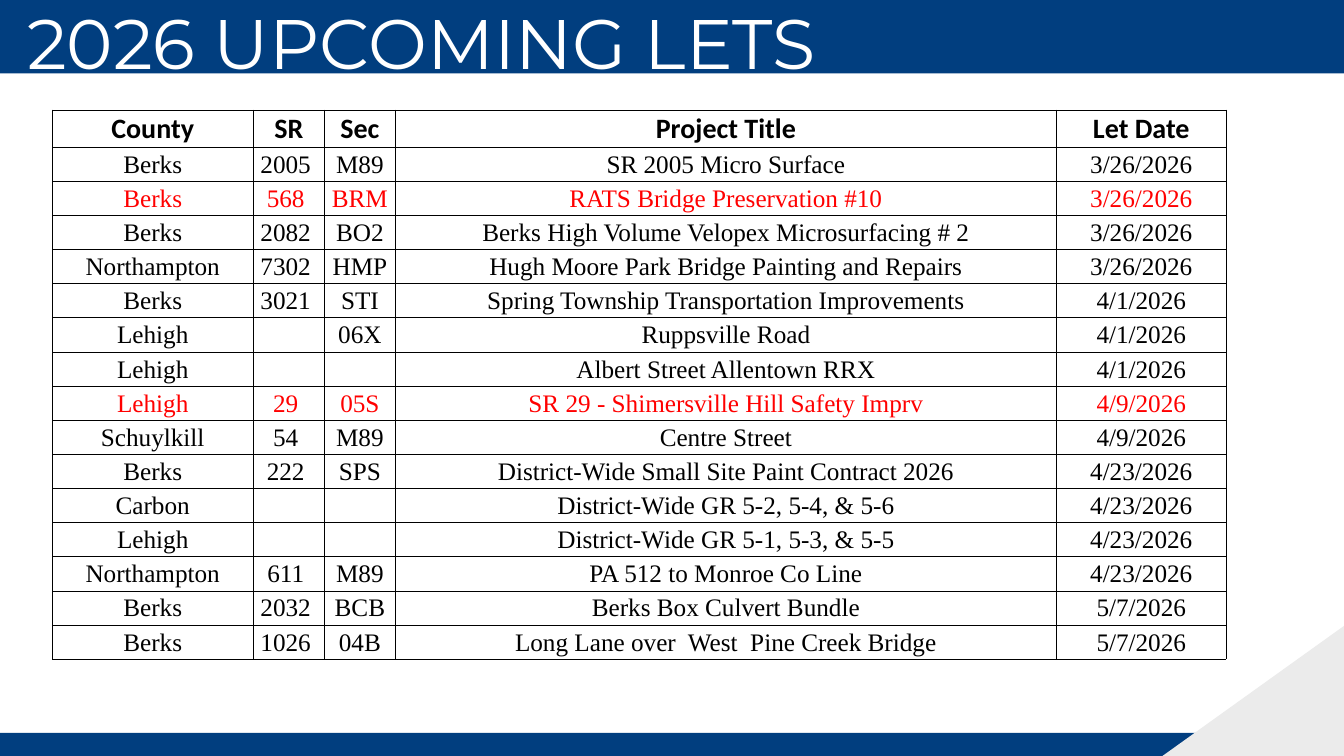
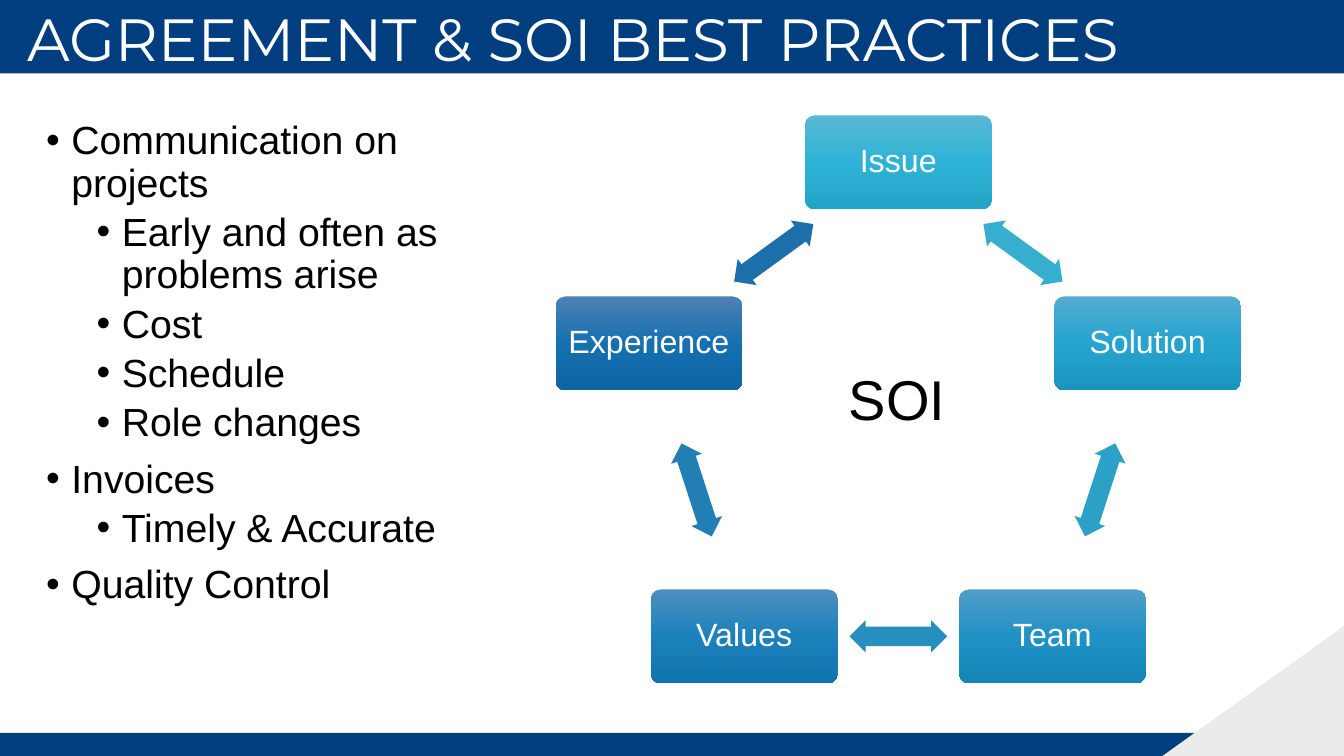
import math
from dataclasses import dataclass
from typing import NamedTuple, Optional

import lxml.etree
import pptx
import pptx.dml.color
import pptx.enum.shapes
import pptx.enum.text
import pptx.oxml.ns
import pptx.util
from copy import deepcopy

Inches = pptx.util.Inches
Pt = pptx.util.Pt
qn = pptx.oxml.ns.qn
Preset = pptx.enum.shapes.MSO_SHAPE
Anchor = pptx.enum.text.MSO_ANCHOR
Align = pptx.enum.text.PP_ALIGN


class TextStyle(NamedTuple):
    font: str
    size: float
    color: str
    bold: bool = False


@dataclass(frozen=True)
class Theme:
    width: float = 13.33
    height: float = 7.5
    navy: str = "013E7F"
    corner: str = "EBEBEB"
    white: str = "FFFFFF"
    border: str = "000000"
    border_width: float = 0.5
    heading: TextStyle = TextStyle("Montserrat", 50, "FFFFFF")
    long_heading: TextStyle = TextStyle("Montserrat", 42.5, "FFFFFF")
    table_header: TextStyle = TextStyle("Calibri", 20, "000000", True)
    table_body: TextStyle = TextStyle("Times New Roman", 18, "000000")
    table_highlight: TextStyle = TextStyle("Times New Roman", 18, "FF0000")
    bullet: TextStyle = TextStyle("Arial", 28, "000000")
    step: TextStyle = TextStyle("Arial", 23, "FFFFFF")
    hub: TextStyle = TextStyle("Arial", 40, "000000")


THEME = Theme()


class Box(NamedTuple):
    left: float
    top: float
    width: float
    height: float

    def lengths(self) -> list:
        return [Inches(value) for value in self]


class Letting(NamedTuple):
    county: str
    route: str
    section: str
    project: str
    date: str
    highlighted: bool = False


class Bullet(NamedTuple):
    text: str
    level: int = 0


class Step(NamedTuple):
    label: str
    gradient: tuple
    arrow: str


LETTING_HEADER = ("County", "SR", "Sec", "Project Title", "Let Date")
LETTING_WIDTHS = (1.99, 0.71, 0.7, 6.56, 1.68)
LETTINGS = (
    Letting("Berks", "2005 ", "M89", "SR 2005 Micro Surface", "3/26/2026"),
    Letting("Berks", "568 ", "BRM", "RATS Bridge Preservation #10", "3/26/2026", True),
    Letting("Berks", "2082 ", "BO2", "Berks High Volume Velopex Microsurfacing # 2", "3/26/2026"),
    Letting("Northampton", "7302 ", "HMP", "Hugh Moore Park Bridge Painting and Repairs", "3/26/2026"),
    Letting("Berks", "3021 ", "STI", "Spring Township Transportation Improvements", "4/1/2026"),
    Letting("Lehigh", "", "06X", "Ruppsville Road", "4/1/2026"),
    Letting("Lehigh", "", "", "Albert Street Allentown RRX", "4/1/2026"),
    Letting("Lehigh", "29 ", "05S", "SR 29 - Shimersville Hill Safety Imprv", "4/9/2026", True),
    Letting("Schuylkill", "54 ", "M89", "Centre Street", "4/9/2026"),
    Letting("Berks", "222 ", "SPS", "District-Wide Small Site Paint Contract 2026", "4/23/2026"),
    Letting("Carbon", "", "", "District-Wide GR 5-2, 5-4, & 5-6", "4/23/2026"),
    Letting("Lehigh", "", "", "District-Wide GR 5-1, 5-3, & 5-5", "4/23/2026"),
    Letting("Northampton", "611 ", "M89", "PA 512 to Monroe Co Line", "4/23/2026"),
    Letting("Berks", "2032 ", "BCB", "Berks Box Culvert Bundle", "5/7/2026"),
    Letting("Berks", "1026 ", "04B", "Long Lane over  West  Pine Creek Bridge", "5/7/2026"),
)

PRACTICES = (
    Bullet("Communication on projects"),
    Bullet("Early and often as problems arise", 1),
    Bullet("Cost", 1),
    Bullet("Schedule", 1),
    Bullet("Role changes", 1),
    Bullet("Invoices"),
    Bullet("Timely & Accurate", 1),
    Bullet("Quality Control"),
)

STEPS = (
    Step("Issue", ("59B8D4", "2EB3D6", "21A4C6"), "36AFCE"),
    Step("Solution", ("53ACD1", "25A4CF", "1A95BF"), "2DA0C8"),
    Step("Team", ("519CC8", "2092C5", "1584B6"), "278FBE"),
    Step("Values", ("4F8EBF", "1B81BB", "1174AD"), "227FB4"),
    Step("Experience", ("4E80B5", "1670B0", "0D65A3"), "1D6FA9"),
)


def rgb(value: str) -> pptx.dml.color.RGBColor:
    return pptx.dml.color.RGBColor.from_string(value)


def add_run(paragraph, text: str, style: TextStyle) -> None:
    run = paragraph.add_run()
    run.text = text
    run.font.name = style.font
    run.font.size = Pt(style.size)
    run.font.bold = style.bold
    run.font.color.rgb = rgb(style.color)


def add_preset(slide, preset, box: Box, color: Optional[str] = None):
    shape = slide.shapes.add_shape(preset, *box.lengths())
    shape.shadow.inherit = False
    shape.line.fill.background()
    if color:
        shape.fill.solid()
        shape.fill.fore_color.rgb = rgb(color)
    return shape


def add_text_frame(slide, box: Box, wrap: bool = True):
    frame = slide.shapes.add_textbox(*box.lengths()).text_frame
    frame.word_wrap = wrap
    return frame


def add_branded_slide(deck, heading: str, style: TextStyle):
    slide = deck.slides.add_slide(deck.slide_layouts[6])
    add_preset(slide, Preset.RECTANGLE, Box(0, 7.27, THEME.width, 0.23), THEME.navy)
    corner = add_preset(slide, Preset.RIGHT_TRIANGLE, Box(11.53, 6.21, 1.8, 1.29), THEME.corner)
    corner._element.spPr.get_or_add_xfrm().set("flipH", "1")
    add_preset(slide, Preset.RECTANGLE, Box(0, 0, THEME.width, 0.73), THEME.navy)
    title = add_text_frame(slide, Box(0.17, 0.11, 12.96, 0.8)).paragraphs[0]
    title.line_spacing = 0.8
    add_run(title, heading, style)
    return slide


def add_borders(cell) -> None:
    properties = cell._tc.get_or_add_tcPr()
    for side in ("a:lnL", "a:lnR", "a:lnT", "a:lnB"):
        line = lxml.etree.SubElement(properties, qn(side), w=str(Pt(THEME.border_width)))
        fill = lxml.etree.SubElement(line, qn("a:solidFill"))
        lxml.etree.SubElement(fill, qn("a:srgbClr"), val=THEME.border)


def fill_row(cells, texts: tuple, style: TextStyle, inset: float) -> None:
    for cell, text in zip(cells, texts):
        add_borders(cell)
        cell.fill.solid()
        cell.fill.fore_color.rgb = rgb(THEME.white)
        cell.margin_left = cell.margin_right = cell.margin_top = Inches(inset)
        cell.margin_bottom = 0
        cell.vertical_anchor = Anchor.MIDDLE
        paragraph = cell.text_frame.paragraphs[0]
        paragraph.alignment = Align.CENTER
        if text:
            add_run(paragraph, text, style)
        else:
            paragraph.font.size = Pt(style.size)


def add_letting_table(slide) -> None:
    box = Box(0.52, 1.09, sum(LETTING_WIDTHS), 5.45)
    header_height = 0.37
    row_height = (box.height - header_height) / len(LETTINGS)
    table = slide.shapes.add_table(
        len(LETTINGS) + 1, len(LETTING_HEADER), *box.lengths()
    ).table
    table.first_row = table.horz_banding = False
    for column, width in zip(table.columns, LETTING_WIDTHS):
        column.width = Inches(width)
    for index, row in enumerate(table.rows):
        row.height = Inches(row_height if index else header_height)
    header, *body = table.rows
    fill_row(header.cells, LETTING_HEADER, THEME.table_header, 0)
    for row, letting in zip(body, LETTINGS):
        style = THEME.table_highlight if letting.highlighted else THEME.table_body
        fill_row(row.cells, letting[:5], style, 0.01)


def add_bullets(slide, box: Box, bullets: tuple) -> None:
    frame = add_text_frame(slide, box)
    for index, bullet in enumerate(bullets):
        paragraph = frame.add_paragraph() if index else frame.paragraphs[0]
        paragraph.level = bullet.level
        paragraph.line_spacing = 0.9
        if index:
            paragraph.space_before = Pt(5 if bullet.level else 10)
        properties = paragraph._p.get_or_add_pPr()
        properties.set("marL", str(Inches(0.25 + 0.5 * bullet.level)))
        properties.set("indent", str(Inches(-0.25)))
        lxml.etree.SubElement(properties, qn("a:buFont"), typeface="Arial")
        lxml.etree.SubElement(properties, qn("a:buChar"), char="•")
        add_run(paragraph, bullet.text, THEME.bullet)


def apply_gradient(shape, colors: tuple) -> None:
    fill = shape.fill
    fill.gradient()
    fill.gradient_angle = 270
    stop_list = shape._element.spPr.find(qn("a:gradFill")).find(qn("a:gsLst"))
    stop_list.append(deepcopy(stop_list[0]))
    for index, (stop, color) in enumerate(zip(fill.gradient_stops, colors)):
        stop.position = index / (len(colors) - 1)
        stop.color.rgb = rgb(color)


def centered(x: float, y: float, width: float, height: float) -> Box:
    return Box(x - width / 2, y - height / 2, width, height)


def polar(angle: float, radius: float) -> tuple:
    radians = math.radians(angle)
    return 8.91 + radius * math.sin(radians), 4.21 - radius * math.cos(radians)


def add_step(slide, step: Step, angle: float, radius: float) -> None:
    card = add_preset(slide, Preset.ROUNDED_RECTANGLE, centered(*polar(angle, radius), 1.85, 0.93))
    card.adjustments[0] = 0.1
    apply_gradient(card, step.gradient)
    frame = card.text_frame
    frame.word_wrap = True
    frame.vertical_anchor = Anchor.MIDDLE
    frame.margin_left = frame.margin_right = Inches(0.05)
    label = frame.paragraphs[0]
    label.alignment = Align.CENTER
    label.line_spacing = 0.9
    add_run(label, step.label, THEME.step)


def add_cycle(slide) -> None:
    radius = 2.6
    turn = 360 / len(STEPS)
    midpoint_radius = radius * math.cos(math.radians(turn / 2))
    for index, step in enumerate(STEPS):
        angle = index * turn
        add_step(slide, step, angle, radius)
        middle = angle + turn / 2
        arrow_box = centered(*polar(middle, midpoint_radius), 0.97, 0.32)
        arrow = add_preset(slide, Preset.LEFT_RIGHT_ARROW, arrow_box, step.arrow)
        arrow.adjustments[0] = 0.6
        arrow.adjustments[1] = 0.5
        arrow.rotation = middle
    hub = add_text_frame(slide, Box(8.32, 3.57, 1.18, 0.77), wrap=False)
    add_run(hub.paragraphs[0], "SOI", THEME.hub)


def main() -> None:
    deck = pptx.Presentation()
    deck.slide_width = Inches(THEME.width)
    deck.slide_height = Inches(THEME.height)
    lets = add_branded_slide(deck, "2026 UPCOMING LETS", THEME.heading)
    add_letting_table(lets)
    practices = add_branded_slide(deck, "AGREEMENT & SOI BEST PRACTICES", THEME.long_heading)
    add_bullets(practices, Box(0.36, 1.15, 4.5, 5.78), PRACTICES)
    add_cycle(practices)
    deck.save("out.pptx")


if __name__ == "__main__":
    main()
